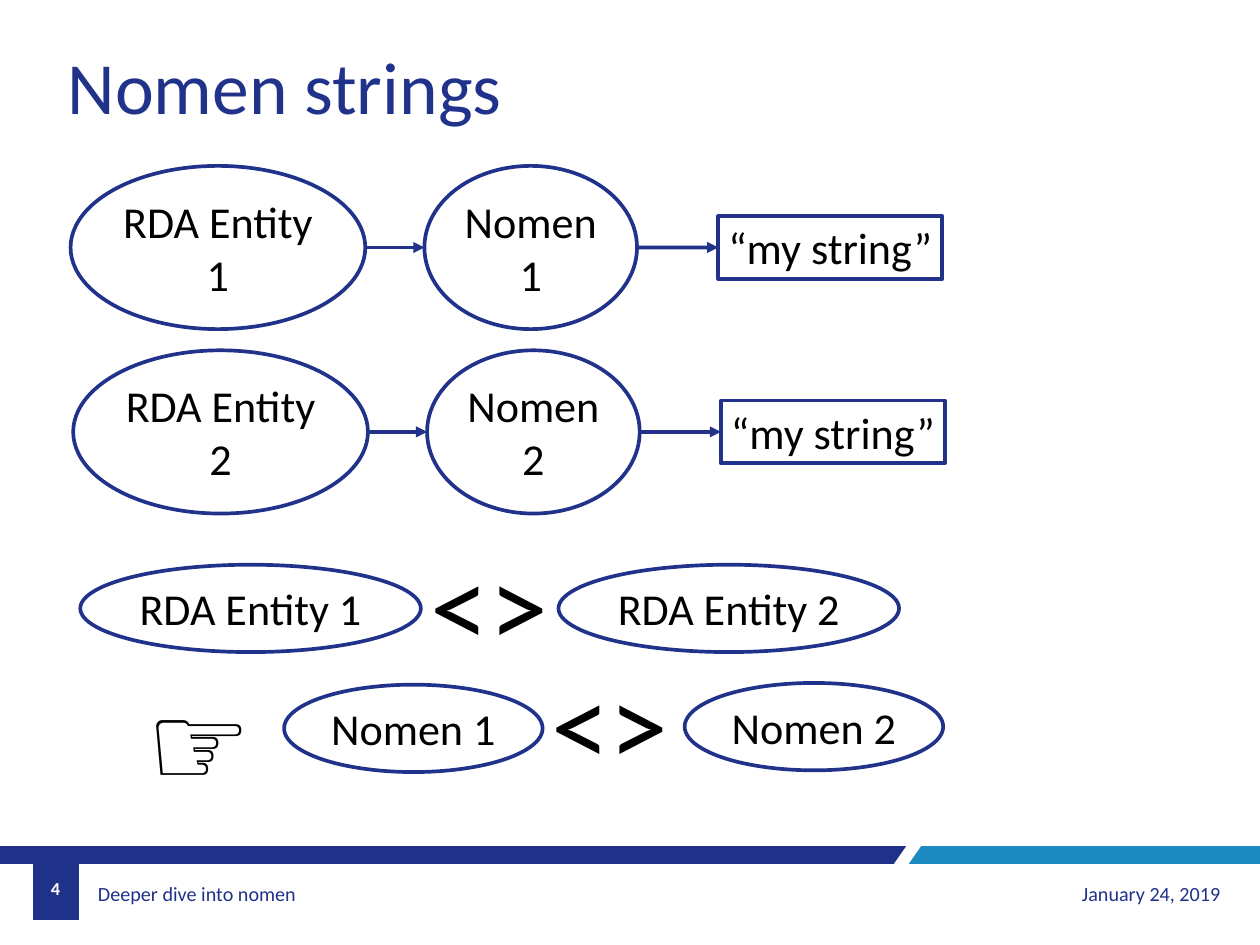
from pptx import Presentation
from pptx.dml.color import RGBColor
from pptx.enum.shapes import MSO_CONNECTOR, MSO_SHAPE
from pptx.enum.text import MSO_ANCHOR, PP_ALIGN
from pptx.oxml.ns import qn
from pptx.util import Inches, Pt
from lxml.etree import SubElement

NAVY = RGBColor(0x20, 0x31, 0x89)
INK = RGBColor(0x21, 0x32, 0x8A)
BLUE = RGBColor(0x1D, 0x8B, 0xC1)
BLACK = RGBColor(0, 0, 0)
WHITE = RGBColor(255, 255, 255)

prs = Presentation()
prs.slide_width, prs.slide_height = Inches(14.28), Inches(10.71)
slide = prs.slides.add_slide(prs.slide_layouts[6])
shapes = slide.shapes


def add_text(box, text, size, color, align=PP_ALIGN.LEFT,
             anchor=MSO_ANCHOR.TOP, wrap=False, bold=False):
    frame = box.text_frame
    frame.text = text
    frame.word_wrap = wrap
    frame.vertical_anchor = anchor
    for paragraph in frame.paragraphs:
        paragraph.alignment = align
        for run in paragraph.runs:
            run.font.name = "Calibri"
            run.font.size = Pt(size)
            run.font.bold = bold
            run.font.color.rgb = color
    return frame


def add_node(kind, left, top, width, height, text):
    node = shapes.add_shape(kind, Inches(left), Inches(top),
                            Inches(width), Inches(height))
    node.shadow.inherit = False
    node.fill.background()
    node.line.color.rgb = INK
    node.line.width = Pt(3)
    add_text(node, text, 36, BLACK, PP_ALIGN.CENTER)
    return node


# Footer bands and page number tab
bands = [
    (NAVY, [(10.27, 9.59), (0, 9.59), (0, 9.79), (10.13, 9.79)]),
    (BLUE, [(14.28, 9.59), (10.44, 9.59), (10.3, 9.79), (14.28, 9.79)]),
    (NAVY, [(0.37, 10.43), (0.89, 10.43), (0.89, 9.59), (0.37, 9.59)]),
]
for color, corners in bands:
    points = [(Inches(x), Inches(y)) for x, y in corners]
    builder = shapes.build_freeform(*points[0])
    builder.add_line_segments(points[1:], close=True)
    band = builder.convert_to_shape()
    band.shadow.inherit = False
    band.fill.solid()
    band.fill.fore_color.rgb = color
    band.line.fill.background()

# Footer texts
footers = [
    (1.04, 9.85, 4.02, "Deeper dive into nomen", 16.4, NAVY, PP_ALIGN.LEFT, False),
    (10.27, 9.85, 3.66, "January 24, 2019", 16.4, NAVY, PP_ALIGN.RIGHT, False),
    (0.37, 9.79, 0.52, "4", 14.9, WHITE, PP_ALIGN.CENTER, True),
]
for left, top, width, text, size, color, align, bold in footers:
    footer = shapes.add_textbox(Inches(left), Inches(top), Inches(width), Inches(0.55))
    frame = add_text(footer, text, size, color, align, MSO_ANCHOR.MIDDLE, True, bold)
    if align == PP_ALIGN.LEFT:
        frame.margin_left = frame.margin_right = Inches(0.07)

# Title
title = shapes.add_textbox(Inches(0.67), Inches(0.41), Inches(6.22), Inches(1.22))
add_text(title, "Nomen strings", 60, INK, wrap=True)

# Chains: entity -> nomen -> string
for number, left, top in [(1, 0.8, 1.88), (2, 0.83, 3.97)]:
    entity = add_node(MSO_SHAPE.OVAL, left, top, 3.34, 1.85, f"RDA Entity\n{number}")
    nomen = add_node(MSO_SHAPE.OVAL, left + 4.01, top, 2.41, 1.85, f"Nomen\n{number}")
    string = add_node(MSO_SHAPE.RECTANGLE, left + 7.34, top + 0.57, 2.54, 0.71,
                      "“my string”")
    for source, target in [(entity, nomen), (nomen, string)]:
        arrow = shapes.add_connector(
            MSO_CONNECTOR.CURVE,
            source.left + source.width, source.top + source.height // 2,
            target.left, target.top + target.height // 2)
        if target is string:
            arrow.end_connect(string, 1)
        arrow.line.color.rgb = INK
        arrow.line.width = Pt(3)
        SubElement(arrow.line._get_or_add_ln(), qn("a:tailEnd"), type="triangle")
        SubElement(arrow._element.spPr, qn("a:effectLst"))

# Comparisons: entities differ, nomens differ
comparisons = [
    ("RDA Entity 1", 0.91, 6.4, 3.86),
    ("RDA Entity 2", 6.33, 6.4, 3.86),
    ("Nomen 1", 3.22, 7.76, 2.93),
    ("Nomen 2", 7.76, 7.74, 2.93),
]
for text, left, top, width in comparisons:
    add_node(MSO_SHAPE.OVAL, left, top, width, 0.99, text)

# Large signs
signs = [("<>", 4.78, 5.97, 1.54), ("☞", 1.56, 7.54, 1.47), ("<>", 6.15, 7.32, 1.54)]
for text, left, top, width in signs:
    sign = shapes.add_textbox(Inches(left), Inches(top), Inches(width), Inches(1.72))
    add_text(sign, text, 96, BLACK)

prs.save("out.pptx")
